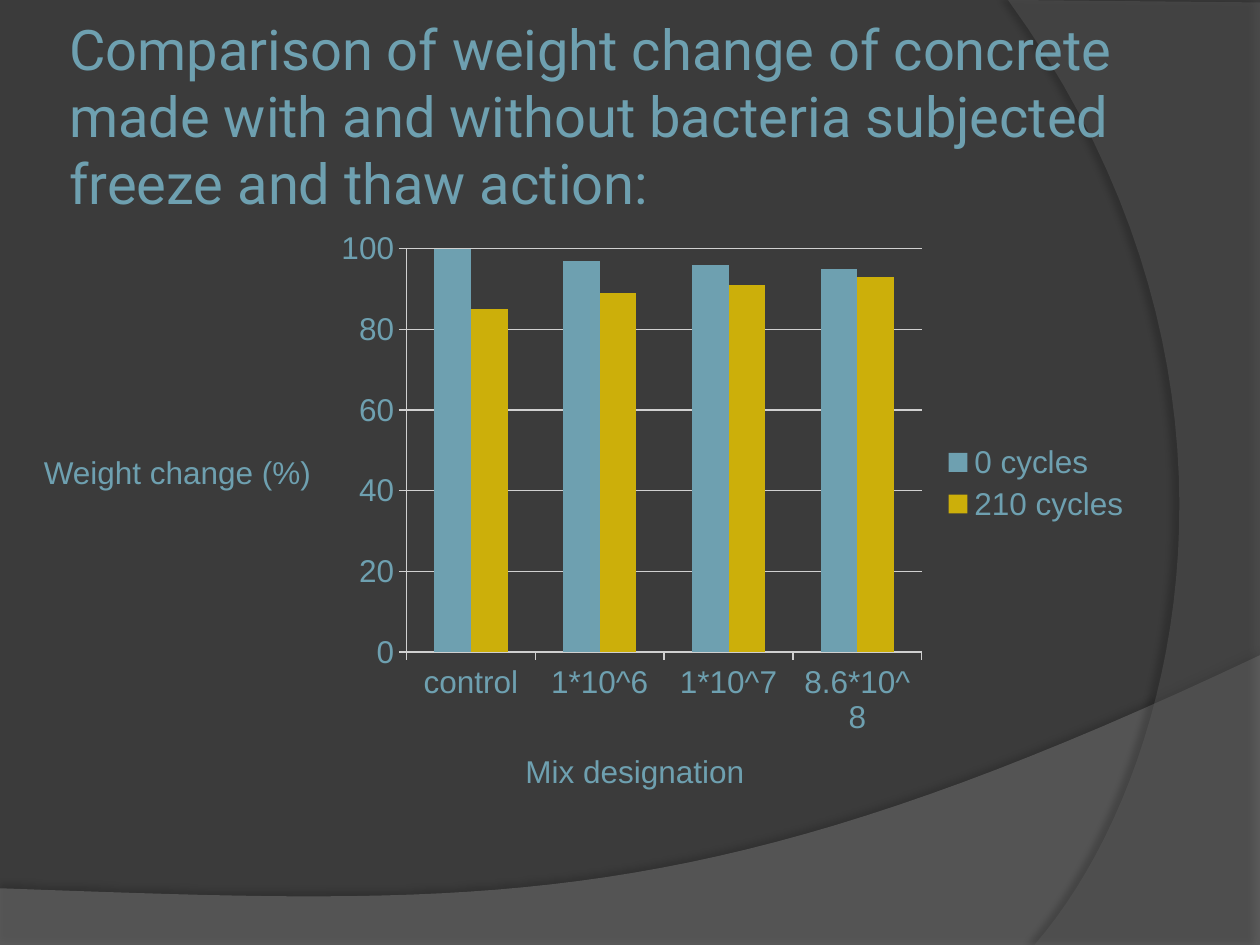
from dataclasses import dataclass

from lxml.etree import SubElement
from pptx import Presentation
from pptx.chart.data import CategoryChartData
from pptx.dml.color import RGBColor
from pptx.enum.chart import XL_CHART_TYPE, XL_LEGEND_POSITION, XL_TICK_MARK
from pptx.enum.text import MSO_ANCHOR, MSO_AUTO_SIZE, PP_ALIGN
from pptx.oxml.ns import qn
from pptx.util import Inches, Pt


@dataclass(frozen=True)
class Theme:
    background: str = "3B3B3B"
    wave: str = "7F7F7F"
    arc: str = "5E5E5E"
    shadow: str = "000000"
    accent: str = "6EA0B0"
    second: str = "CCAF0A"
    lines: str = "D0D0D0"
    title_size: int = 32
    label_size: int = 18
    title_font: str = "Roboto"
    label_font: str = "Arial"


theme = Theme()


def write_text(frame, text, size=theme.label_size, font=theme.label_font,
               color=theme.accent, anchor=MSO_ANCHOR.TOP, wrap=True,
               left=0.1, right=0.1):
    frame.word_wrap = wrap
    frame.auto_size = MSO_AUTO_SIZE.NONE
    frame.vertical_anchor = anchor
    frame.margin_left, frame.margin_right = Inches(left), Inches(right)
    frame.margin_top = frame.margin_bottom = Inches(0.05)
    paragraph = frame.paragraphs[0]
    paragraph.alignment = PP_ALIGN.LEFT
    run = paragraph.add_run()
    run.text = text
    run.font.size = Pt(size)
    run.font.name = font
    run.font.color.rgb = RGBColor.from_string(color)


def curve_points(start, control_1, control_2, end, steps=40):
    """Return points along a cubic Bezier curve, without its start."""
    points = []
    for step in range(1, steps + 1):
        t = step / steps
        weights = ((1 - t) ** 3, 3 * t * (1 - t) ** 2, 3 * t ** 2 * (1 - t), t ** 3)
        points.append(tuple(
            sum(w * v for w, v in zip(weights, values))
            for values in zip(start, control_1, control_2, end)))
    return points


presentation = Presentation()
presentation.slide_width = Inches(10)
presentation.slide_height = Inches(7.5)
slide = presentation.slides.add_slide(presentation.slide_layouts[5])
slide.background.fill.solid()
slide.background.fill.fore_color.rgb = RGBColor.from_string(theme.background)

# Background swooshes: outline, colour, opacity, shadow opacity, distance, angle
wave = [(0, 7.05), (0, 7.51), (10, 7.51), (10, 5.2)]
wave += curve_points((10, 5.2), (5.59, 7.29), (3.91, 7.19), (0, 7.05))
arc = [(10, 0.02), (10, 7.5), (8.21, 7.5)]
arc += curve_points((8.21, 7.5), (9.35, 6.19), (10.18, 3), (8, 0))
swooshes = [
    (wave, theme.wave, 45, 35, 3.5, 270),
    (arc, theme.arc, 40, 45, 4, 180),
]
for outline, color, opacity, shadow_opacity, distance, angle in swooshes:
    corners = [(Inches(x), Inches(y)) for x, y in outline]
    builder = slide.shapes.build_freeform(*corners[0])
    builder.add_line_segments(corners[1:], close=True)
    swoosh = builder.convert_to_shape()
    swoosh.line.fill.background()
    swoosh.fill.solid()
    swoosh.fill.fore_color.rgb = RGBColor.from_string(color)
    properties = swoosh.fill._xPr
    fill_color = properties.find(qn("a:solidFill")).find(qn("a:srgbClr"))
    SubElement(fill_color, qn("a:alpha"), val=str(opacity * 1000))
    swoosh.shadow.inherit = False
    shadow = SubElement(
        properties.find(qn("a:effectLst")), qn("a:outerShdw"),
        blurRad=str(Pt(4)), dist=str(Pt(distance)), dir=str(angle * 60000),
        algn="ctr", rotWithShape="0")
    shadow_color = SubElement(shadow, qn("a:srgbClr"), val=theme.shadow)
    SubElement(shadow_color, qn("a:alpha"), val=str(shadow_opacity * 1000))

# Title, moved in front of the swooshes
title = slide.shapes.title
slide.shapes._spTree.append(title._element)
title.left, title.top = Inches(0.5), Inches(0)
title.width, title.height = Inches(8.92), Inches(1.83)
write_text(
    title.text_frame,
    "Comparison of weight change of concrete made with and without bacteria "
    "subjected freeze and thaw action:",
    size=theme.title_size, font=theme.title_font,
    anchor=MSO_ANCHOR.MIDDLE, left=0.05, right=0.05)

# Weight after freeze and thaw cycles
weights = CategoryChartData(number_format="General")
weights.categories = ["control", "1*10^6", "1*10^7", "8.6*10^8"]
weights.add_series("0 cycles", [100, 97, 96, 95])
weights.add_series("210 cycles", [85, 89, 91, 93])
chart = slide.shapes.add_chart(
    XL_CHART_TYPE.COLUMN_CLUSTERED, Inches(2.58), Inches(1.75),
    Inches(6.5), Inches(4.17), weights).chart
chart.has_title = False
chart.font.size = Pt(theme.label_size)
chart.font.name = theme.label_font
chart.font.color.rgb = RGBColor.from_string(theme.accent)
chart.has_legend = True
chart.legend.position = XL_LEGEND_POSITION.RIGHT
chart.legend.include_in_layout = False

columns = chart.plots[0]
columns.gap_width = 150
columns.overlap = 0
columns.vary_by_categories = False
for cycles, color in zip(columns.series, (theme.accent, theme.second)):
    cycles.format.fill.solid()
    cycles.format.fill.fore_color.rgb = RGBColor.from_string(color)

value_axis = chart.value_axis
value_axis.minimum_scale, value_axis.maximum_scale = 0, 100
value_axis.major_unit = 20
value_axis.has_major_gridlines = True
for axis in (chart.category_axis, value_axis):
    axis.major_tick_mark = XL_TICK_MARK.OUTSIDE
    axis.minor_tick_mark = XL_TICK_MARK.NONE
for line in (chart.category_axis.format.line, value_axis.format.line,
             value_axis.major_gridlines.format.line):
    line.color.rgb = RGBColor.from_string(theme.lines)
    line.width = Pt(0.75)

# Axis captions
captions = [
    ("Weight change (%)", 0.25, 3.55, 2.5, 0.1),
    ("Mix designation", 3.86, 5.92, 2.29, 0.31),
]
for caption, x, y, width, indent in captions:
    label = slide.shapes.add_textbox(Inches(x), Inches(y), Inches(width), Inches(0.4))
    write_text(label.text_frame, caption, left=indent)

presentation.save("out.pptx")
